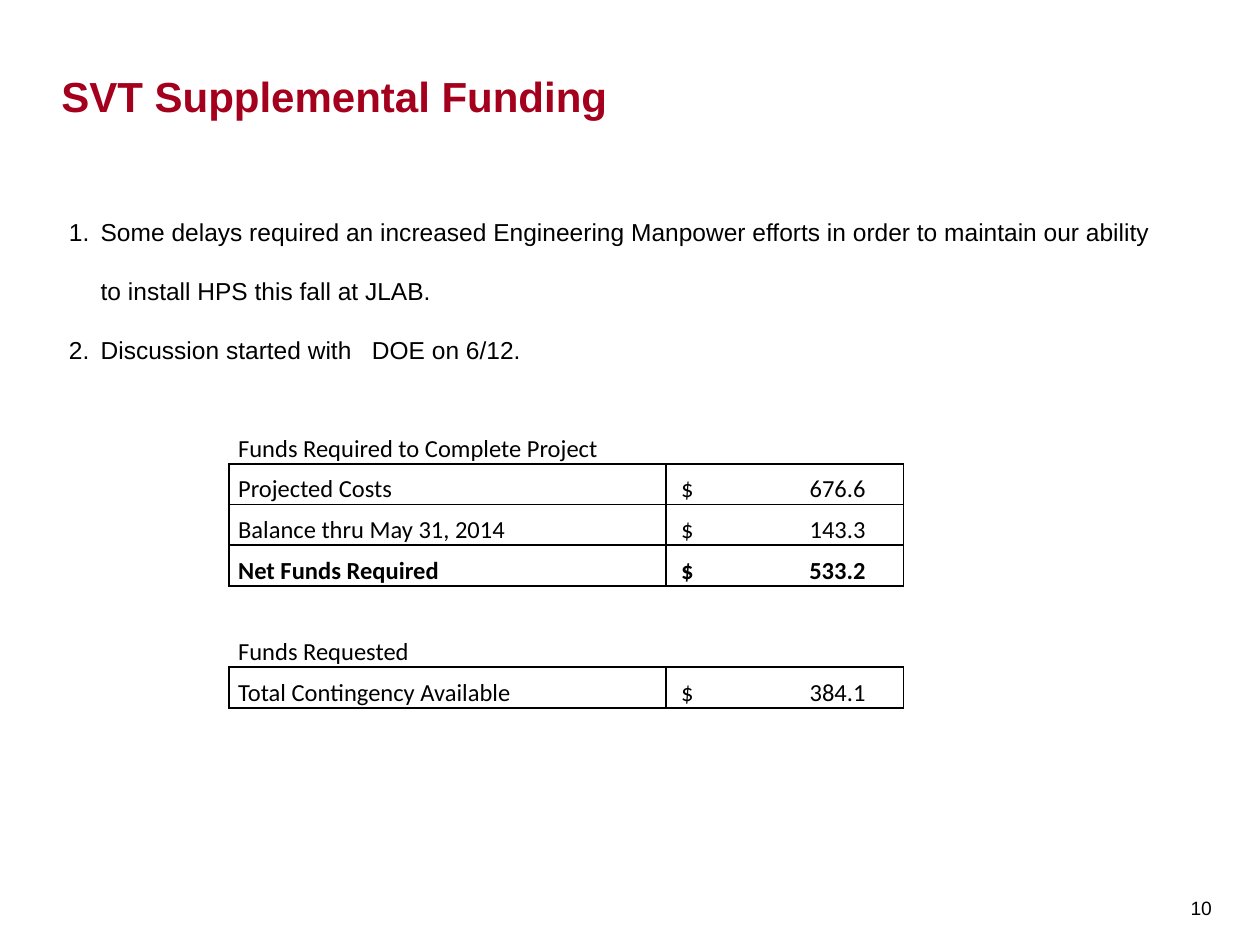
from dataclasses import dataclass

from lxml import etree
from pptx import Presentation
from pptx.dml.color import RGBColor
from pptx.enum import text
from pptx.oxml.ns import qn
from pptx.util import Cm, Pt


@dataclass(frozen=True)
class Theme:
    sans: str = "Arial"
    table_font: str = "Calibri"
    red: str = "A4001D"
    black: str = "000000"
    title_size: int = 24
    body_size: int = 14
    number_size: int = 11
    border: float = 1


THEME = Theme()
TITLE = "SVT Supplemental Funding"
POINTS = [
    "Some delays required an increased Engineering Manpower efforts in order to "
    "maintain our ability to install HPS this fall at JLAB.",
    "Discussion started with   DOE on 6/12.",
]
PAGE_NUMBER = "10"
FUNDS = [
    ("heading", "Funds Required to Complete Project", ""),
    ("item", "Projected Costs", "676.6"),
    ("item", "Balance thru May 31, 2014", "143.3"),
    ("total", "Net Funds Required", "533.2"),
    ("gap", "", ""),
    ("heading", "Funds Requested", ""),
    ("item", "Total Contingency Available", "384.1"),
]
BORDERED_SIDES = {"heading": "B", "item": "LRTB", "total": "LRTB", "gap": "T"}
COLUMN_WIDTHS = (8.81, 4.78)
ROW_HEIGHT = 0.82


def style(paragraph, size, font=THEME.sans, color=THEME.black, bold=False):
    paragraph.font.size = Pt(size)
    paragraph.font.name = font
    paragraph.font.bold = bold
    paragraph.font.color.rgb = RGBColor.from_string(color)


def add_text(page, place, lines, anchor, insets):
    box = page.shapes.add_textbox(*map(Cm, place))
    frame = box.text_frame
    frame.word_wrap = True
    frame.vertical_anchor = anchor
    (frame.margin_left, frame.margin_top,
     frame.margin_right, frame.margin_bottom) = map(Cm, insets)
    frame.text = "\n".join(lines)
    return frame.paragraphs


def number_paragraph(paragraph):
    properties = paragraph._p.get_or_add_pPr()
    properties.set("marL", str(Cm(0.64)))
    properties.set("indent", str(-Cm(0.64)))
    etree.SubElement(properties, qn("a:buFont"), typeface="+mj-lt")
    etree.SubElement(properties, qn("a:buAutoNum"), type="arabicPeriod")


def add_right_tab(paragraph, position):
    tabs = etree.SubElement(paragraph._p.get_or_add_pPr(), qn("a:tabLst"))
    etree.SubElement(tabs, qn("a:tab"), pos=str(Cm(position)), algn="r")


def set_borders(cell, sides):
    properties = cell._tc.get_or_add_tcPr()
    for index, side in enumerate("LRTB"):
        line = etree.Element(qn(f"a:ln{side}"), w=str(Pt(THEME.border)))
        if side in sides:
            fill = etree.SubElement(line, qn("a:solidFill"))
            etree.SubElement(fill, qn("a:srgbClr"), val=THEME.black)
        else:
            etree.SubElement(line, qn("a:noFill"))
        properties.insert(index, line)


def fill_cell(cell, kind, words, is_amount):
    cell.fill.background()
    set_borders(cell, BORDERED_SIDES[kind])
    cell.vertical_anchor = text.MSO_ANCHOR.BOTTOM
    cell.margin_left = Cm(0.3 if is_amount else 0.18)
    cell.margin_right = Cm(0.18)
    cell.margin_top = cell.margin_bottom = 0
    if not words:
        return
    paragraph = cell.text_frame.paragraphs[0]
    paragraph.text = f"$\t{words}" if is_amount else words
    paragraph.line_spacing = 1.15
    if is_amount:
        add_right_tab(paragraph, 3.72)
    style(paragraph, THEME.body_size, THEME.table_font, bold=kind == "total")


def add_funds_table(page):
    frame = page.shapes.add_table(
        len(FUNDS), len(COLUMN_WIDTHS), Cm(4.62), Cm(8.53),
        Cm(sum(COLUMN_WIDTHS)), Cm(ROW_HEIGHT * len(FUNDS)))
    table = frame.table
    table.first_row = table.horz_banding = False
    for column, width in zip(table.columns, COLUMN_WIDTHS):
        column.width = Cm(width)
    for row, (kind, label, amount) in zip(table.rows, FUNDS):
        row.height = Cm(ROW_HEIGHT)
        fill_cell(row.cells[0], kind, label, False)
        fill_cell(row.cells[1], kind, amount, True)


def main():
    deck = Presentation()
    deck.slide_width, deck.slide_height = Cm(25.4), Cm(19.05)
    page = deck.slides.add_slide(deck.slide_layouts[6])

    points = add_text(page, (1.14, 3.66, 22.53, 3.84), POINTS,
                      text.MSO_ANCHOR.TOP, (0.25, 0.13, 0.25, 0.13))
    for paragraph in points:
        paragraph.line_spacing = 2.0
        number_paragraph(paragraph)
        style(paragraph, THEME.body_size)

    number = add_text(page, (23.8, 17.55, 0.89, 1.5), [PAGE_NUMBER],
                      text.MSO_ANCHOR.MIDDLE, (0.2, 0.15, 0.2, 0.13))
    style(number[0], THEME.number_size)

    title = add_text(page, (1.24, 0.36, 22.5, 2.08), [TITLE],
                     text.MSO_ANCHOR.BOTTOM, (0, 0, 0, 0))
    style(title[0], THEME.title_size, color=THEME.red, bold=True)

    add_funds_table(page)
    deck.save("out.pptx")


if __name__ == "__main__":
    main()
